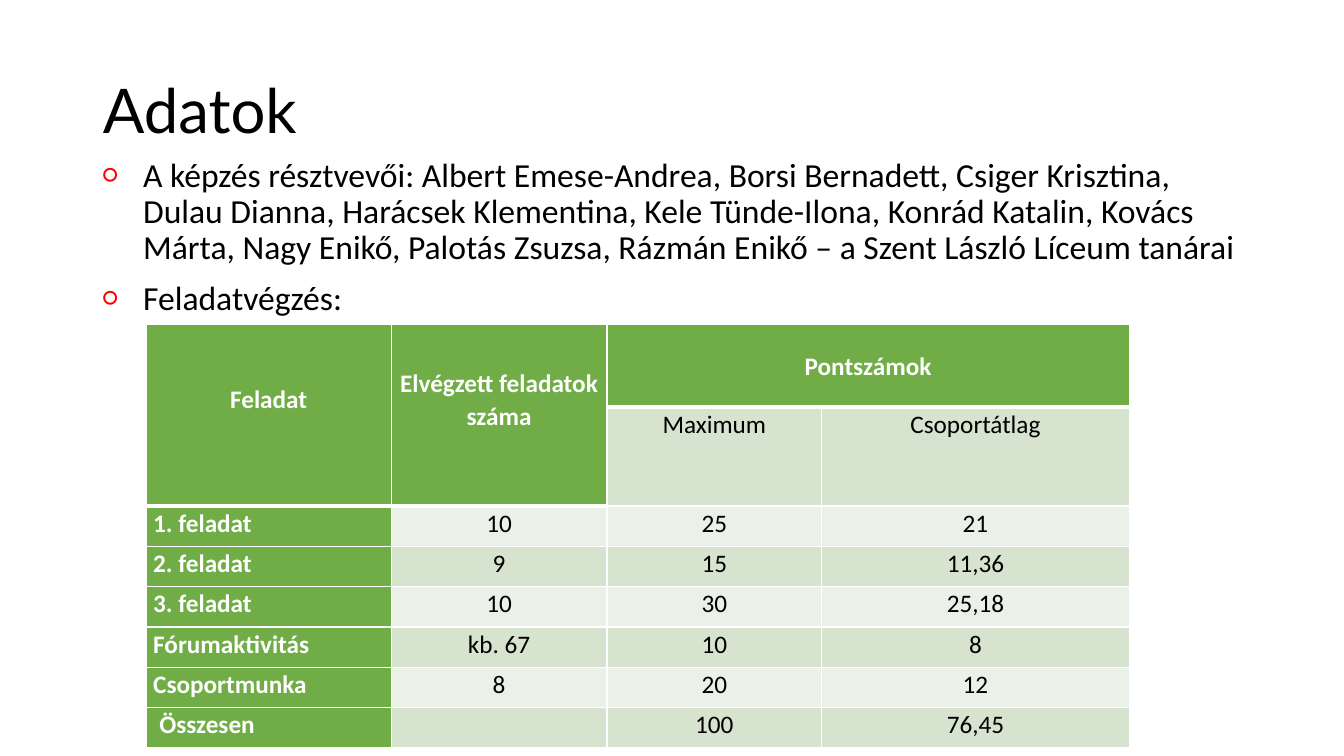
from dataclasses import dataclass

from lxml.etree import SubElement
from pptx import Presentation
from pptx.dml.color import RGBColor
from pptx.enum.text import MSO_ANCHOR, MSO_AUTO_SIZE, PP_ALIGN
from pptx.oxml.ns import qn
from pptx.util import Inches, Pt


@dataclass(frozen=True)
class Theme:
    """Colours, fonts and type sizes of the slide."""
    ink: str = "000000"
    white: str = "FFFFFF"
    bullet: str = "FF0000"
    green: str = "70AD47"
    dark_band: str = "D5E3CF"
    light_band: str = "EBF1E9"
    title_font: str = "Lato"
    body_font: str = "Calibri"
    title_size: int = 44
    body_size: int = 24
    table_size: int = 18


THEME = Theme()

POINTS = [
    "A képzés résztvevői: Albert Emese-Andrea, Borsi Bernadett, Csiger Krisztina, "
    "Dulau Dianna, Harácsek Klementina, Kele Tünde-Ilona, Konrád Katalin, Kovács Márta, "
    "Nagy Enikő, Palotás Zsuzsa, Rázmán Enikő – a Szent László Líceum tanárai",
    "Feladatvégzés:",
]
SCORES = [
    ("Feladat", "Elvégzett feladatok száma", "Pontszámok", ""),
    ("", "", "Maximum", "Csoportátlag"),
    ("1. feladat", "10", "25", "21"),
    ("2. feladat", "9", "15", "11,36"),
    ("3. feladat", "10", "30", "25,18"),
    ("Fórumaktivitás", "kb. 67", "10", "8"),
    ("Csoportmunka", "8", "20", "12"),
    ("Összesen", "", "100", "76,45"),
]
COLUMN_WIDTHS = [2.43, 2.14, 2.13, 3.05]
ROW_HEIGHTS = [0.82, 0.98] + [0.4] * 6


def style_runs(paragraph, font_name, size, color, bold=False):
    """Format every run of a paragraph."""
    for run in paragraph.runs:
        run.font.name = font_name
        run.font.size = Pt(size)
        run.font.bold = bold
        run.font.color.rgb = RGBColor.from_string(color)


def place(region, box):
    """Move a placeholder to a box given in inches."""
    region.left, region.top, region.width, region.height = map(Inches, box)
    region.text_frame.word_wrap = True
    region.text_frame.auto_size = MSO_AUTO_SIZE.NONE


def add_bullet(paragraph):
    """Give a paragraph a hanging ring bullet."""
    properties = paragraph._p.get_or_add_pPr()
    properties.set("marL", str(Inches(0.4)))
    properties.set("indent", str(-Inches(0.4)))
    bullet_color = SubElement(properties, qn("a:buClr"))
    SubElement(bullet_color, qn("a:srgbClr"), val=THEME.bullet)
    SubElement(properties, qn("a:buSzPct"), val="80000")
    SubElement(properties, qn("a:buFont"), typeface=THEME.body_font)
    SubElement(properties, qn("a:buChar"), char="○")


def fill_title(title, box):
    """Write the slide title."""
    place(title, box)
    title.text_frame.text = "Adatok"
    title.text_frame.vertical_anchor = MSO_ANCHOR.MIDDLE
    heading = title.text_frame.paragraphs[0]
    heading.alignment = PP_ALIGN.LEFT
    heading.line_spacing = 0.9
    style_runs(heading, THEME.title_font, THEME.title_size, THEME.ink)


def fill_points(body, box):
    """Write the bulleted list."""
    place(body, box)
    body.text_frame.text = "\n".join(POINTS)
    for index, point in enumerate(body.text_frame.paragraphs):
        add_bullet(point)
        point.line_spacing = 0.9
        point.space_before = Pt(10 if index else 0)
        style_runs(point, THEME.body_font, THEME.body_size, THEME.ink)


def draw_borders(cell, bottom_width):
    """Draw white cell borders, with a chosen width at the bottom."""
    properties = cell._tc.get_or_add_tcPr()
    for side, width in (("L", 1), ("R", 1), ("T", 1), ("B", bottom_width)):
        border = SubElement(properties, qn(f"a:ln{side}"), w=str(Pt(width)))
        border_fill = SubElement(border, qn("a:solidFill"))
        SubElement(border_fill, qn("a:srgbClr"), val=THEME.white)


def fill_cell(cell, text, row, column):
    """Write and format one table cell according to its place."""
    header = row == 0 or (row == 1 and column < 2)
    label = header or column == 0
    band = THEME.light_band if row % 2 == 0 else THEME.dark_band
    draw_borders(cell, 3 if header else 1)
    cell.fill.solid()
    cell.fill.fore_color.rgb = RGBColor.from_string(THEME.green if label else band)
    cell.margin_left = Inches(0.13 if text == "Összesen" else 0.07)
    cell.margin_right = Inches(0.07)
    cell.margin_top = 0
    cell.margin_bottom = Inches(0.32 if row == 0 and column < 2 else 0)
    cell.vertical_anchor = MSO_ANCHOR.MIDDLE if header else MSO_ANCHOR.TOP
    if text:
        cell.text_frame.text = text
        entry = cell.text_frame.paragraphs[0]
        entry.alignment = PP_ALIGN.LEFT if label and not header else PP_ALIGN.CENTER
        entry.line_spacing = 1.07
        style_runs(entry, THEME.body_font, THEME.table_size,
                   THEME.white if label else THEME.ink, label)


def add_scores(slide, left, top):
    """Add the score table with its two-level header."""
    scores = slide.shapes.add_table(
        len(SCORES), len(COLUMN_WIDTHS), Inches(left), Inches(top),
        Inches(sum(COLUMN_WIDTHS)), Inches(sum(ROW_HEIGHTS))).table
    for column, width in zip(scores.columns, COLUMN_WIDTHS):
        column.width = Inches(width)
    for row, height in zip(scores.rows, ROW_HEIGHTS):
        row.height = Inches(height)
    for row, entries in enumerate(SCORES):
        for column, text in enumerate(entries):
            fill_cell(scores.cell(row, column), text, row, column)
    for column in range(2):
        scores.cell(0, column).merge(scores.cell(1, column))
    scores.cell(0, 2).merge(scores.cell(0, 3))


def add_data_slide(presentation):
    """Add the slide with participants and scores."""
    slide = presentation.slides.add_slide(presentation.slide_layouts[1])
    fill_title(slide.shapes.title, (0.92, 0.4, 11.5, 1.45))
    fill_points(slide.placeholders[1], (0.92, 1.52, 11.5, 5.23))
    add_scores(slide, 1.45, 3.22)


def main():
    """Build and save the presentation."""
    presentation = Presentation()
    presentation.slide_width = Inches(13.33)
    presentation.slide_height = Inches(7.5)
    add_data_slide(presentation)
    presentation.save("out.pptx")


if __name__ == "__main__":
    main()
